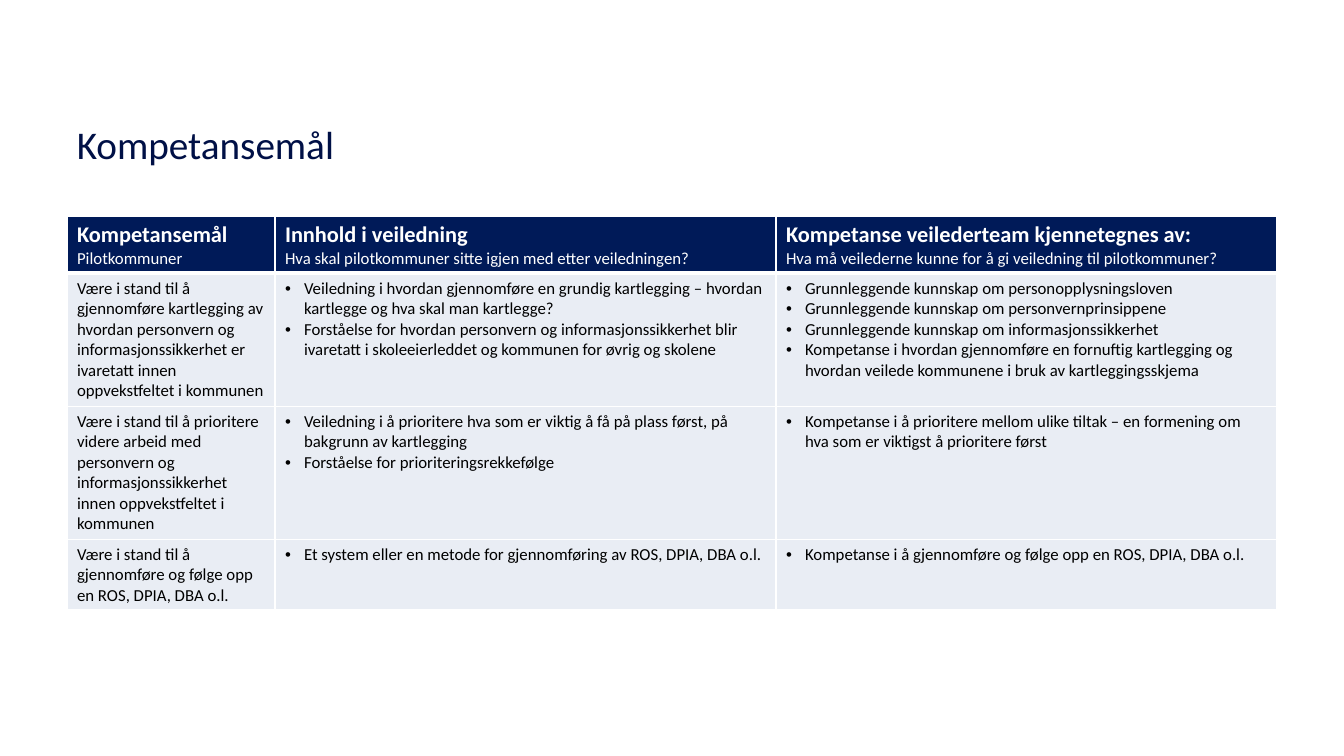
from lxml.etree import SubElement
from pptx import Presentation
from pptx.dml.color import RGBColor
from pptx.enum.text import MSO_ANCHOR as Anchor
from pptx.oxml.ns import qn
from pptx.util import Pt

PX = 914400 / 100.8
NAVY = RGBColor(0x00, 0x10, 0x46)
HEADER_FILL = RGBColor(0x00, 0x1A, 0x58)
BODY_FILL = RGBColor(0xE9, 0xED, 0xF4)
WHITE = RGBColor(0xFF, 0xFF, 0xFF)
BLACK = RGBColor(0x00, 0x00, 0x00)

COLUMN_WIDTHS = [208, 501, 501]
ROW_HEIGHTS = [56, 133, 133, 70]
BULLET_INDENT = 19

ROWS = [
    [
        ["Kompetansemål", "Pilotkommuner"],
        ["Innhold i veiledning",
         "Hva skal pilotkommuner sitte igjen med etter veiledningen?"],
        ["Kompetanse veilederteam kjennetegnes av:",
         "Hva må veilederne kunne for å gi veiledning til pilotkommuner?"],
    ],
    [
        ["Være i stand til å gjennomføre kartlegging av hvordan personvern og "
         "informasjonssikkerhet er ivaretatt innen oppvekstfeltet i kommunen"],
        ["Veiledning i hvordan gjennomføre en grundig kartlegging – hvordan "
         "kartlegge og hva skal man kartlegge?",
         "Forståelse for hvordan personvern og informasjonssikkerhet blir "
         "ivaretatt i skoleeierleddet og kommunen for øvrig og skolene"],
        ["Grunnleggende kunnskap om personopplysningsloven",
         "Grunnleggende kunnskap om personvernprinsippene",
         "Grunnleggende kunnskap om informasjonssikkerhet",
         "Kompetanse i hvordan gjennomføre en fornuftig kartlegging og "
         "hvordan veilede kommunene i bruk av kartleggingsskjema"],
    ],
    [
        ["Være i stand til å prioritere videre arbeid med personvern og "
         "informasjonssikkerhet innen oppvekstfeltet i kommunen"],
        ["Veiledning i å prioritere hva som er viktig å få på plass først, på "
         "bakgrunn av kartlegging",
         "Forståelse for prioriteringsrekkefølge"],
        ["Kompetanse i å prioritere mellom ulike tiltak – en formening om hva "
         "som er viktigst å prioritere først"],
    ],
    [
        ["Være i stand til å gjennomføre og følge opp en ROS, DPIA, DBA o.l."],
        ["Et system eller en metode for gjennomføring av ROS, DPIA, DBA o.l."],
        ["Kompetanse i å gjennomføre og følge opp en ROS, DPIA, DBA o.l."],
    ],
]


def px(length):
    return round(length * PX)


def format_run(span, size, color, bold=False):
    span.font.name = "Calibri"
    span.font.size = Pt(size)
    span.font.bold = bold
    span.font.color.rgb = color


deck = Presentation()
deck.slide_width, deck.slide_height = px(1344), px(756)
page = deck.slides.add_slide(deck.slide_layouts[6])

title = page.shapes.add_textbox(px(67), px(81), px(1210), px(125)).text_frame
title.word_wrap = True
title.vertical_anchor = Anchor.MIDDLE
title.text = "Kompetansemål"
format_run(title.paragraphs[0].runs[0], 28, NAVY)

table = page.shapes.add_table(
    len(ROWS), len(COLUMN_WIDTHS), px(67), px(216),
    px(sum(COLUMN_WIDTHS)), px(sum(ROW_HEIGHTS))).table
for column, width in zip(table.columns, COLUMN_WIDTHS):
    column.width = px(width)
for row, height in zip(table.rows, ROW_HEIGHTS):
    row.height = px(height)

for row_index, row_texts in enumerate(ROWS):
    is_header = row_index == 0
    for column_index, lines in enumerate(row_texts):
        cell = table.cell(row_index, column_index)
        cell.text_frame.text = "\n".join(lines)
        for line_index, para in enumerate(cell.text_frame.paragraphs):
            is_heading = is_header and line_index == 0
            if column_index > 0 and not is_header:
                properties = para._p.get_or_add_pPr()
                properties.set("marL", str(px(BULLET_INDENT)))
                properties.set("indent", str(-px(BULLET_INDENT)))
                SubElement(properties, qn("a:buFont"), typeface="Arial")
                SubElement(properties, qn("a:buChar"), char="•")
            format_run(para.runs[0], 16 if is_heading else 12,
                       WHITE if is_header else BLACK, is_heading)

        # Borders come before the fill in the cell properties
        cell_properties = cell._tc.get_or_add_tcPr()
        top = 3 if row_index == 1 else 1
        bottom = 3 if is_header else 1
        for side, points in zip("LRTB", (1, 1, top, bottom)):
            border = SubElement(cell_properties, qn(f"a:ln{side}"), w=str(Pt(points)))
            border_fill = SubElement(border, qn("a:solidFill"))
            SubElement(border_fill, qn("a:srgbClr"), val=str(WHITE))
        cell.fill.solid()
        cell.fill.fore_color.rgb = HEADER_FILL if is_header else BODY_FILL

deck.save("out.pptx")
